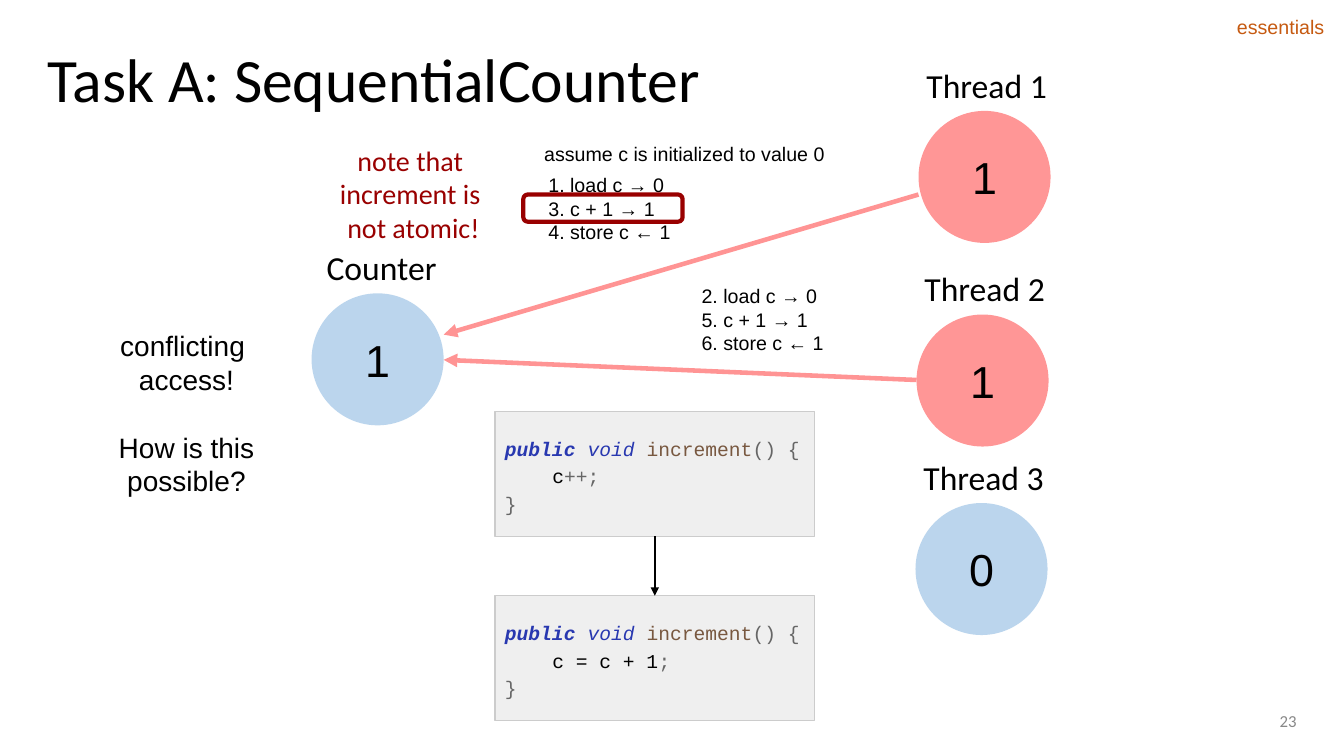
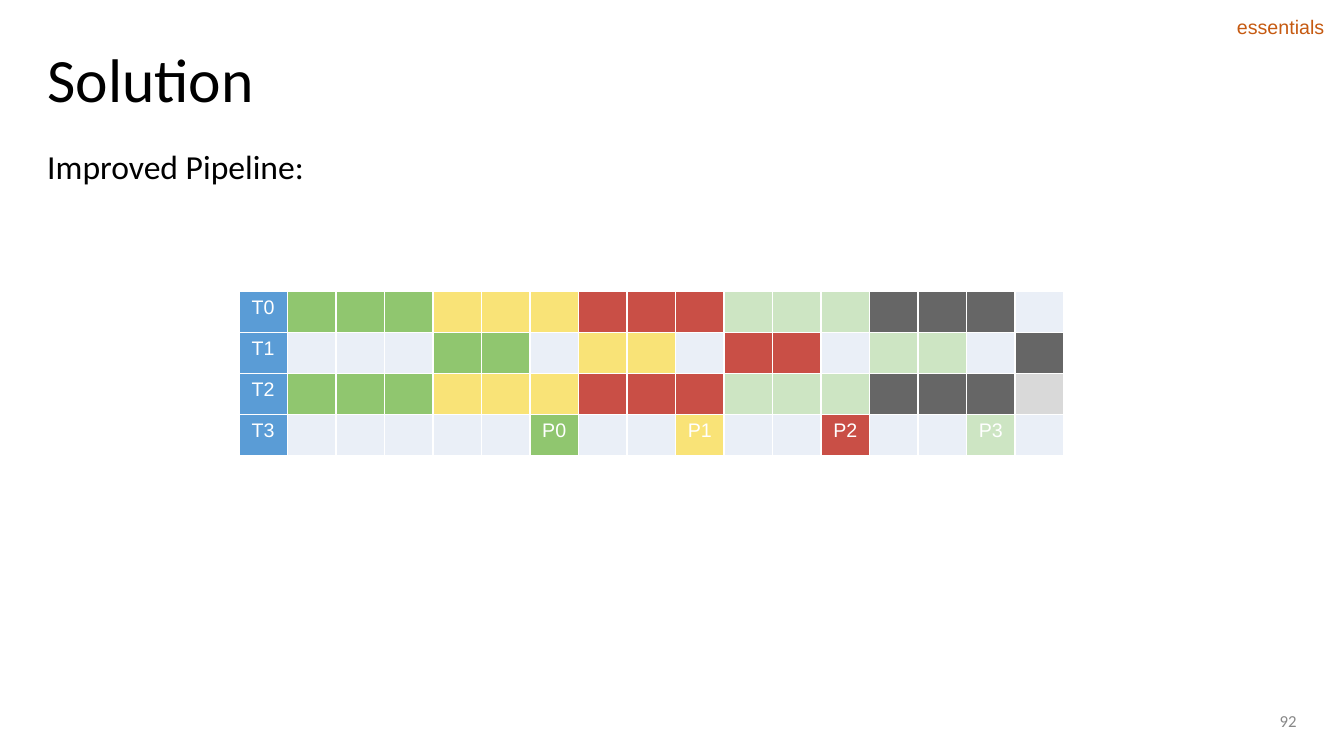
from lxml import etree
from pptx import Presentation
from pptx.dml.color import RGBColor
from pptx.enum import shapes, text
from pptx.oxml.ns import qn
from pptx.util import Inches, Pt

# Shared style
BLACK, WHITE = RGBColor(0, 0, 0), RGBColor(255, 255, 255)
ORANGE, GRAY = RGBColor(0xC6, 0x5A, 0x11), RGBColor(0x88, 0x88, 0x88)
BLUE, RED = RGBColor(0x5B, 0x9B, 0xD5), RGBColor(255, 0, 0)
DARK_RED = RGBColor(0x99, 0, 0)
CODE_FILL, CODE_LINE = RGBColor(0xEF, 0xEF, 0xEF), RGBColor(0xCC, 0xCC, 0xCC)
KEYWORD, METHOD = RGBColor(0x28, 0x38, 0xB0), RGBColor(0x78, 0x58, 0x40)
SYMBOL, HEADER = RGBColor(0x66, 0x66, 0x66), RGBColor(0x5A, 0x9C, 0xD6)
LEFT, CENTER, RIGHT = text.PP_ALIGN.LEFT, text.PP_ALIGN.CENTER, text.PP_ALIGN.RIGHT
TOP, MIDDLE = text.MSO_ANCHOR.TOP, text.MSO_ANCHOR.MIDDLE

# Counter slide content
DIAMETER = 1.31
CIRCLES = [  # label, value, left, top, colour, label offset
    ("Counter", "1", 3.09, 2.91, BLUE, 0.05),
    ("Thread 1", "1", 9.11, 1.1, RED, -0.02),
    ("Thread 2", "1", 9.09, 3.12, RED, -0.02),
    ("Thread 3", "0", 9.08, 4.99, BLUE, -0.02),
]
ACCESS_ARROWS = [((9.11, 1.93), (4.4, 3.32)), ((9.09, 3.77), (4.4, 3.57))]
NOTES = [  # lines, box, format
    (["conflicting ", "access!"], (0.61, 3.21, 2.48, 0.44), dict(size=20, align=CENTER)),
    (["How is this possible?"], (0.61, 4.22, 2.48, 0.44), dict(size=20, align=CENTER)),
    (["note that ", "increment is ", "not atomic!"], (2.86, 1.37, 2.48, 0.44),
     dict(size=20, font="Calibri", color=DARK_RED, align=CENTER)),
    (["assume c is initialized to value 0"], (5.15, 1.27, 3.28, 0.5),
     dict(align=CENTER, anchor=MIDDLE)),
    (["1. load c → 0", "3. c + 1 → 1", "4. store c ← 1"], (5.34, 1.67, 2.48, 0.44), {}),
    (["2. load c → 0", "5. c + 1 → 1", "6. store c ← 1"], (6.86, 2.77, 1.73, 0.44), {}),
]
SIGNATURE = [("public ", dict(color=KEYWORD, bold=True, italic=True)),
             ("void ", dict(color=KEYWORD, italic=True)),
             ("increment", dict(color=METHOD)), ("() {", {})]
CODE_BOXES = [(4.08, "c", "++;"), (5.91, "c = c + 1", ";")]  # top, variable part, rest

# Pipeline slide content: one letter per time step
STAGES = {
    "G": RGBColor(0x90, 0xC6, 0x6F), "Y": RGBColor(0xF9, 0xE3, 0x77),
    "R": RGBColor(0xC9, 0x4F, 0x46), "L": RGBColor(0xCD, 0xE5, 0xC3),
    "K": RGBColor(0x66, 0x66, 0x66), "D": RGBColor(0xD9, 0xD9, 0xD9),
    ".": RGBColor(0xEA, 0xEF, 0xF7),
}
PIPELINE = [("T0", "GGGYYYRRRLLLKKK."), ("T1", "...GG.YY.RR.LL.K"),
            ("T2", "GGGYYYRRRLLLKKKD"), ("T3", ".....G..Y..R..L.")]
FINISHED = ("T3", dict(G="P0", Y="P1", R="P2", L="P3"))


def write(tf, lines, size=14, font="Arial", color=BLACK, align=LEFT, spacing=None):
    """Each line is a string or a list of (text, run format) pairs."""
    for i, line in enumerate(lines):
        p = tf.paragraphs[0] if i == 0 else tf.add_paragraph()
        p.alignment = align
        if spacing:
            p.line_spacing = spacing
        for words, look in [(line, {})] if isinstance(line, str) else line:
            r = p.add_run()
            r.text = words
            r.font.size, r.font.name = Pt(size), font
            r.font.color.rgb = look.get("color", color)
            r.font.bold = look.get("bold", False)
            r.font.italic = look.get("italic", False)


def frame(sp, anchor=TOP, inset=0.05, wrap=True):
    tf = sp.text_frame
    tf.word_wrap, tf.vertical_anchor = wrap, anchor
    tf.auto_size = text.MSO_AUTO_SIZE.NONE
    tf.margin_left = tf.margin_right = Inches(0.1)
    tf.margin_top = tf.margin_bottom = Inches(inset)
    return tf


def add_text(s, lines, box, anchor=TOP, inset=0.05, wrap=True, **look):
    sp = s.shapes.add_textbox(*map(Inches, box))
    write(frame(sp, anchor, inset, wrap), lines, **look)


def add_shape(s, kind, box, fill=None, line=None, width=1):
    sp = s.shapes.add_shape(kind, *map(Inches, box))
    sp.shadow.inherit = False
    if fill is None:
        sp.fill.background()
    else:
        sp.fill.solid()
        sp.fill.fore_color.rgb = fill
    if line is None:
        sp.line.fill.background()
    else:
        sp.line.color.rgb, sp.line.width = line, Pt(width)
    return sp


def set_alpha(sp, percent):
    color = next(sp._element.spPr.iter(qn("a:srgbClr")))
    etree.SubElement(color, qn("a:alpha"), val=str(percent * 1000))


def add_arrow(s, start, end, color, width):
    c = s.shapes.add_connector(shapes.MSO_CONNECTOR.STRAIGHT, *map(Inches, start + end))
    c.line.color.rgb, c.line.width = color, Pt(width)
    spPr = c._element.spPr
    etree.SubElement(spPr.find(qn("a:ln")), qn("a:tailEnd"), type="triangle")
    etree.SubElement(spPr, qn("a:effectLst"))
    return c


def add_slide(prs, title, number):
    s = prs.slides.add_slide(prs.slide_layouts[5])
    sp = s.shapes.title
    sp.left, sp.top, sp.width, sp.height = map(Inches, (0.37, 0.2, 12.59, 1.24))
    write(frame(sp, MIDDLE, 0.1), [title], size=44, font="Calibri", spacing=0.9)
    add_text(s, [number], (9.42, 6.95, 3.54, 0.4), anchor=MIDDLE,
             size=12, font="Calibri", color=GRAY, align=RIGHT)
    add_text(s, ["essentials"], (12.17, 0.1, 1.07, 0.34), wrap=False, color=ORANGE)
    return s


def add_code(s, top, variable, rest):
    sp = add_shape(s, shapes.MSO_SHAPE.RECTANGLE, (4.91, top, 3.17, 1.24),
                   CODE_FILL, CODE_LINE, 0.75)
    tf = frame(sp, MIDDLE, 0.1)
    body = [(variable, dict(color=BLACK)), (rest, {})]
    write(tf, [SIGNATURE, body, "}"], font="Courier New", color=SYMBOL, spacing=1.17)
    tf.paragraphs[1]._p.get_or_add_pPr().set("marL", str(Inches(0.47)))
    return sp


def build_counter(prs):
    s = add_slide(prs, "Task A: SequentialCounter", "23")
    # Counter and threads
    for label, value, x, y, color, shift in CIRCLES:
        sp = add_shape(s, shapes.MSO_SHAPE.OVAL, (x, y, DIAMETER, DIAMETER), color)
        set_alpha(sp, 41)
        write(frame(sp, MIDDLE), [value], size=32, align=CENTER)
        add_text(s, [label], (x + shift, y - 0.51, 1.41, 0.5), size=24, font="Calibri")
    for start, end in ACCESS_ARROWS:
        set_alpha(add_arrow(s, start, end, RED, 3.25), 42)
    # Code and its expansion
    short, expanded = [add_code(s, *code) for code in CODE_BOXES]
    c = add_arrow(s, (6.49, 5.32), (6.49, 5.91), BLACK, 1.5)
    c.begin_connect(short, 2)
    c.end_connect(expanded, 0)
    # Notes and highlighted step
    for lines, box, look in NOTES:
        add_text(s, lines, box, **look)
    add_shape(s, shapes.MSO_SHAPE.ROUNDED_RECTANGLE, (5.19, 1.93, 1.58, 0.27),
              line=DARK_RED, width=3)


def fill_cell(cell, color, label=""):
    tcPr = cell._tc.get_or_add_tcPr()
    for side in ("a:lnL", "a:lnR", "a:lnT", "a:lnB"):
        ln = etree.SubElement(tcPr, qn(side), w=str(Pt(1)))
        fill = etree.SubElement(ln, qn("a:solidFill"))
        etree.SubElement(fill, qn("a:srgbClr"), val=str(WHITE))
    cell.fill.solid()
    cell.fill.fore_color.rgb = color
    if label:
        write(cell.text_frame, [label], color=WHITE, align=CENTER)


def build_pipeline(prs):
    s = add_slide(prs, "Solution", "92")
    add_text(s, ["Improved Pipeline:"], (0.37, 1.29, 12.59, 1.22), inset=0.1,
             size=24, font="Calibri", spacing=1.15)
    # Schedule
    cols = len(PIPELINE[0][1]) + 1
    table = s.shapes.add_table(len(PIPELINE), cols, Inches(2.37), Inches(2.89),
                               Inches(8.18), Inches(1.63)).table
    table.first_row = table.horz_banding = False
    for col in table.columns:
        col.width = Inches(8.18 / cols)
    for i, (thread, steps) in enumerate(PIPELINE):
        fill_cell(table.cell(i, 0), HEADER, thread)
        labels = FINISHED[1] if thread == FINISHED[0] else {}
        for j, step in enumerate(steps, 1):
            fill_cell(table.cell(i, j), STAGES[step], labels.get(step, ""))


def main():
    prs = Presentation()
    prs.slide_width, prs.slide_height = Inches(13.33), Inches(7.5)
    build_counter(prs)
    build_pipeline(prs)
    prs.save("out.pptx")


if __name__ == "__main__":
    main()
